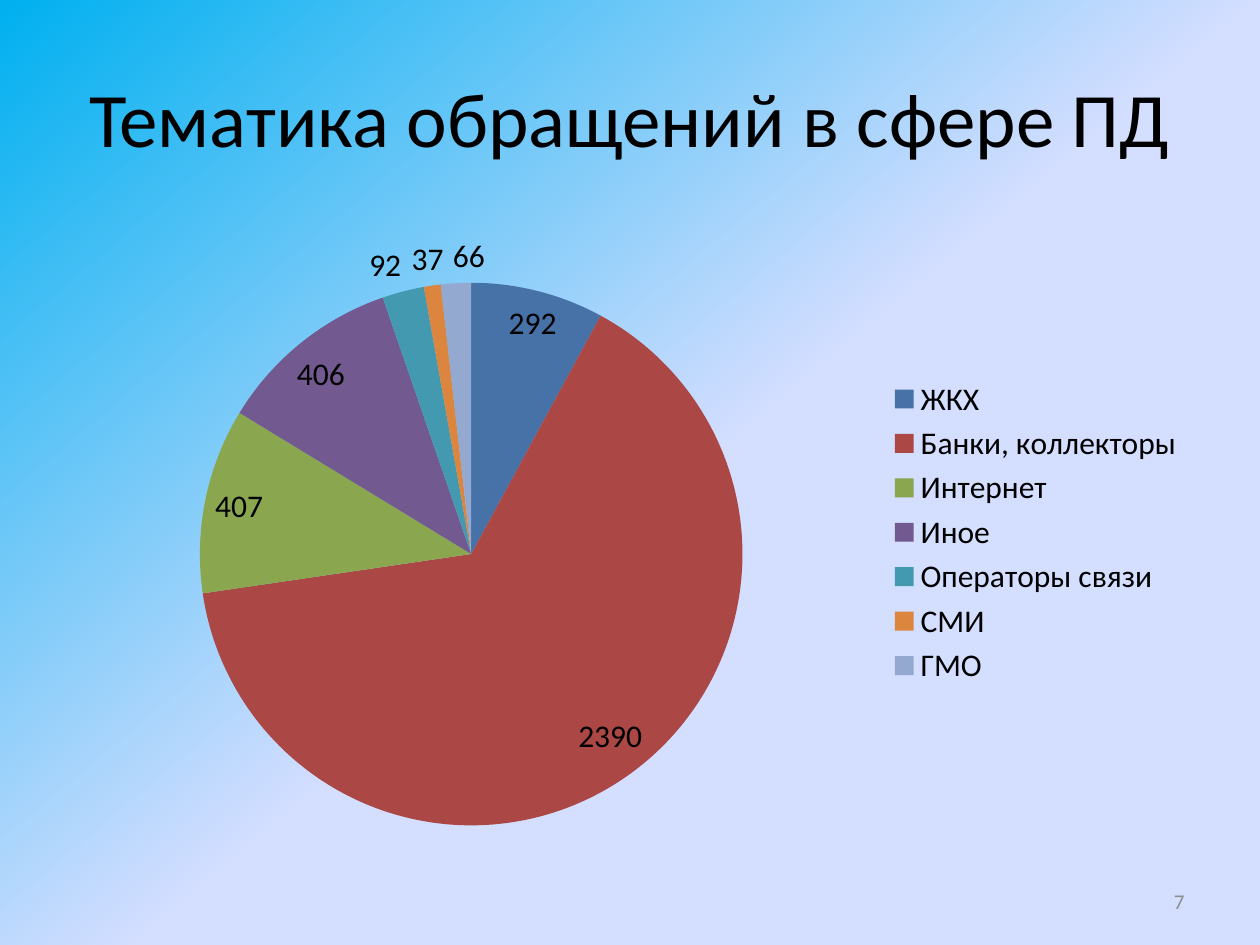
from lxml import etree
from pptx import Presentation
from pptx.chart.data import CategoryChartData
from pptx.dml.color import RGBColor
from pptx.enum.chart import XL_CHART_TYPE as ChartType
from pptx.enum.chart import XL_LABEL_POSITION as LabelPosition
from pptx.enum.chart import XL_LEGEND_POSITION as LegendPosition
from pptx.enum.text import MSO_ANCHOR as Anchor
from pptx.enum.text import PP_ALIGN as Align
from pptx.oxml.ns import qn
from pptx.util import Inches, Pt

FONT = "Calibri"
COLORS = {"text": "000000", "number": "8C8C8C"}
BACKGROUND = [(0, "00B0F0"), (53, "D4DEFF"), (100, "D4DEFF")]
TOPICS = [  # topic, number of requests, slice colour
    ("ЖКХ", 292, "4672A8"),
    ("Банки, коллекторы", 2390, "AB4744"),
    ("Интернет", 407, "8AA64F"),
    ("Иное", 406, "725990"),
    ("Операторы связи", 92, "4299B0"),
    ("СМИ", 37, "DC853E"),
    ("ГМО", 66, "93A9D0"),
]
PIE_AREA = {"x": 0.12, "y": 0.1, "w": 0.48, "h": 0.87}  # shares of the chart


def inches(*lengths):
    return [Inches(length) for length in lengths]


def style_font(font, size, color):
    font.name = FONT
    font.size = Pt(size)
    font.color.rgb = RGBColor.from_string(color)


def paint_background(page):
    fill = page.background.fill
    fill.gradient()
    fill.gradient_angle = 310  # counter-clockwise
    stops = page.background._cSld.find(".//" + qn("a:gsLst"))
    for stop in list(stops):
        stops.remove(stop)
    for share, color in BACKGROUND:
        stop = etree.SubElement(stops, qn("a:gs"), pos=str(share * 1000))
        etree.SubElement(stop, qn("a:srgbClr"), val=color)


def write_line(shape, text, size, color, align):
    frame = shape.text_frame
    frame.word_wrap = True
    frame.vertical_anchor = Anchor.MIDDLE
    para = frame.paragraphs[0]
    para.text = text
    para.alignment = align
    style_font(para.font, size, color)


def place_title(page, box, text):
    title = page.shapes.title
    title.left, title.top, title.width, title.height = inches(*box)
    write_line(title, text, 44, COLORS["text"], Align.CENTER)


def set_plot_layout(chart, area):
    plot_area = chart.plots[0]._element.getparent()
    old = plot_area.find(qn("c:layout"))
    if old is not None:
        plot_area.remove(old)
    layout = etree.Element(qn("c:layout"))
    manual = etree.SubElement(layout, qn("c:manualLayout"))
    settings = {"layoutTarget": "inner", "xMode": "edge", "yMode": "edge", **area}
    for name, value in settings.items():
        etree.SubElement(manual, qn("c:" + name), val=str(value))
    plot_area.insert(0, layout)


def place_pie(page, box):
    data = CategoryChartData()
    data.categories = [topic for topic, _, _ in TOPICS]
    data.add_series("Обращения", [count for _, count, _ in TOPICS])
    chart = page.shapes.add_chart(ChartType.PIE, *inches(*box), data).chart
    style_font(chart.font, 18, COLORS["text"])
    chart.has_title = False
    set_plot_layout(chart, PIE_AREA)

    # Legend
    chart.has_legend = True
    chart.legend.position = LegendPosition.RIGHT
    chart.legend.include_in_layout = False

    # Slices and their values
    plot = chart.plots[0]
    plot.vary_by_categories = True
    for index, (_, _, color) in enumerate(TOPICS):
        fill = plot.series[0].points[index].format.fill
        fill.solid()
        fill.fore_color.rgb = RGBColor.from_string(color)
    plot.has_data_labels = True
    plot.data_labels.show_value = True
    plot.data_labels.show_percentage = False
    plot.data_labels.position = LabelPosition.BEST_FIT


def place_page_number(page, box, number):
    number_box = page.shapes.add_textbox(*inches(*box))
    write_line(number_box, number, 12, COLORS["number"], Align.RIGHT)


def main():
    deck = Presentation()
    deck.slide_width, deck.slide_height = inches(10, 7.5)
    page = deck.slides.add_slide(deck.slide_layouts.get_by_name("Title Only"))
    paint_background(page)
    place_title(page, (0.5, 0.3, 9, 1.25), "Тематика обращений в сфере ПД")
    place_pie(page, (0.5, 1.75, 9, 4.95))
    place_page_number(page, (7.17, 6.95, 2.33, 0.4), "7")
    deck.save("out.pptx")


if __name__ == "__main__":
    main()
